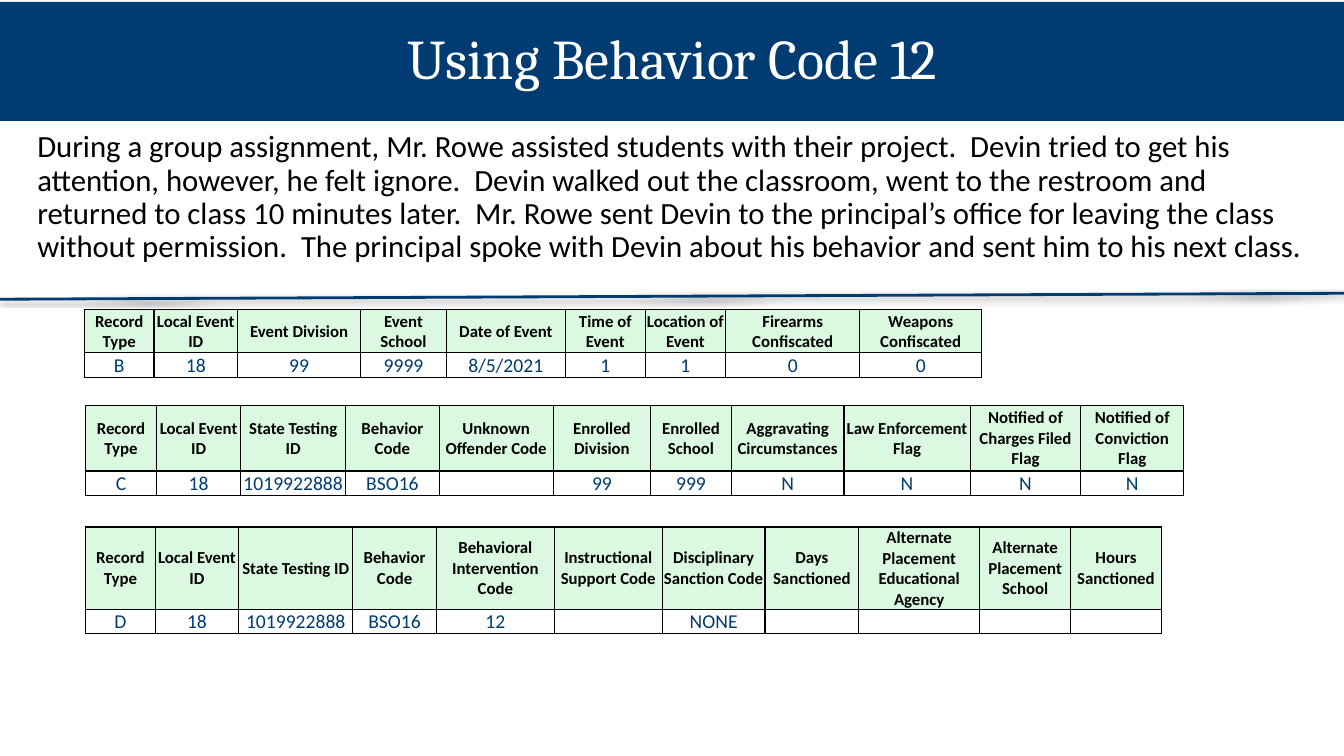
from dataclasses import dataclass

from lxml.etree import SubElement
from pptx import Presentation
from pptx.dml.color import RGBColor
from pptx.enum.shapes import MSO_CONNECTOR as Connector, MSO_SHAPE as Preset
from pptx.enum.text import MSO_ANCHOR as Anchor, PP_ALIGN as Align
from pptx.oxml import parse_xml
from pptx.oxml.ns import nsdecls, qn
from pptx.util import Cm, Pt


@dataclass(frozen=True)
class Theme:
    """Colours, fonts and type sizes of the slide."""
    navy: str = "003C71"
    mint: str = "DAF9E0"
    black: str = "000000"
    white: str = "FFFFFF"
    heading_font: str = "Cambria"
    text_font: str = "Calibri"
    title_size: int = 40
    body_size: int = 22
    header_size: int = 12
    value_size: int = 14


THEME = Theme()

SCENARIO = (
    "During a group assignment, Mr. Rowe assisted students with their project.  "
    "Devin tried to get his attention, however, he felt ignore.  Devin walked out "
    "the classroom, went to the restroom and returned to class 10 minutes later.  "
    "Mr. Rowe sent Devin to the principal’s office for leaving the class without "
    "permission.  The principal spoke with Devin about his behavior and sent him "
    "to his next class."
)

RECORDS = [
    {
        "left": 2.13, "top": 7.8, "header_height": 1.09,
        "columns": [
            ("Record Type", "B", 1.75), ("Local Event ID", "18", 2.11),
            ("Event Division", "99", 3.1), ("Event School", "9999", 2.16),
            ("Date of Event", "8/5/2021", 3.0), ("Time of Event", "1", 2.01),
            ("Location of Event", "1", 2.03), ("Firearms Confiscated", "0", 3.38),
            ("Weapons Confiscated", "0", 3.07),
        ],
    },
    {
        "left": 2.16, "top": 10.22, "header_height": 1.65,
        "columns": [
            ("Record Type", "C", 1.78), ("Local Event ID", "18", 2.13),
            ("State Testing ID", "1019922888", 2.64), ("Behavior Code", "BSO16", 2.36),
            ("Unknown Offender Code", "", 2.87), ("Enrolled Division", "99", 2.46),
            ("Enrolled School", "999", 2.03), ("Aggravating Circumstances", "N", 2.84),
            ("Law Enforcement Flag", "N", 3.18),
            ("Notified of Charges Filed Flag", "N", 2.79),
            ("Notified of Conviction Flag", "N", 2.59),
        ],
    },
    {
        "left": 2.16, "top": 13.28, "header_height": 2.07,
        "columns": [
            ("Record Type", "D", 1.75), ("Local Event ID", "18", 2.11),
            ("State Testing ID", "1019922888", 2.87), ("Behavior Code", "BSO16", 2.11),
            ("Behavioral Intervention Code", "12", 2.97),
            ("Instructional Support Code", "", 2.72),
            ("Disciplinary Sanction Code", "NONE", 2.59), ("Days Sanctioned", "", 2.36),
            ("Alternate Placement Educational Agency", "", 3.05),
            ("Alternate Placement School", "", 2.29), ("Hours Sanctioned", "", 2.29),
        ],
    },
]
VALUE_HEIGHT = 0.62


def add_run(paragraph, text, size, color, font=THEME.text_font, bold=False):
    """Append a formatted run to a paragraph."""
    run = paragraph.add_run()
    run.text = text
    run.font.name = font
    run.font.size = Pt(size)
    run.font.bold = bold
    run.font.color.rgb = RGBColor.from_string(color)


def add_title(slide, text, width):
    """Draw the title band across the slide."""
    band = slide.shapes.add_shape(Preset.RECTANGLE, 0, Cm(0.05), width, Cm(3))
    band.shadow.inherit = False
    band.fill.solid()
    band.fill.fore_color.rgb = RGBColor.from_string(THEME.navy)
    band.line.fill.background()
    band.text_frame.vertical_anchor = Anchor.MIDDLE
    paragraph = band.text_frame.paragraphs[0]
    paragraph.alignment = Align.CENTER
    paragraph.line_spacing = 0.9
    add_run(paragraph, text, THEME.title_size, THEME.white, THEME.heading_font)


def add_scenario(slide, text):
    """Write the scenario paragraph under the title."""
    box = slide.shapes.add_textbox(Cm(0.61), Cm(3.13), Cm(32.54), Cm(4.4))
    frame = box.text_frame
    frame.word_wrap = True
    frame.margin_left = frame.margin_right = Cm(0.33)
    frame.margin_top = frame.margin_bottom = Cm(0.18)
    paragraph = frame.paragraphs[0]
    paragraph.line_spacing = 0.9
    add_run(paragraph, text, THEME.body_size, THEME.black)


def add_divider(slide, width):
    """Draw the slightly tilted line with its soft shadow."""
    line = slide.shapes.add_connector(Connector.STRAIGHT, 0, Cm(7.54), width, Cm(7.39))
    line.line.color.rgb = RGBColor.from_string(THEME.navy)
    line.line.width = Pt(2)
    line._element.spPr.append(parse_xml(
        f'<a:effectLst {nsdecls("a")}>'
        f'<a:outerShdw blurRad="{Pt(3.1)}" dist="{Pt(1.6)}" dir="5400000" rotWithShape="0">'
        f'<a:srgbClr val="{THEME.black}"><a:alpha val="38000"/></a:srgbClr>'
        '</a:outerShdw></a:effectLst>'))


def add_borders(cell):
    """Give a cell thin black borders on all sides."""
    properties = cell._tc.get_or_add_tcPr()
    for index, side in enumerate(("lnL", "lnR", "lnT", "lnB")):
        properties.insert(index, parse_xml(
            f'<a:{side} {nsdecls("a")} w="{Pt(1)}"><a:solidFill>'
            f'<a:srgbClr val="{THEME.black}"/></a:solidFill></a:{side}>'))


def fill_cell(cell, text, is_header):
    """Format a table cell and write its text."""
    size = THEME.header_size if is_header else THEME.value_size
    cell.margin_left = cell.margin_right = cell.margin_top = Cm(0.02)
    cell.margin_bottom = 0
    cell.vertical_anchor = Anchor.MIDDLE
    if is_header:
        cell.fill.solid()
        cell.fill.fore_color.rgb = RGBColor.from_string(THEME.mint)
    else:
        cell.fill.background()
    add_borders(cell)
    paragraph = cell.text_frame.paragraphs[0]
    paragraph.alignment = Align.CENTER
    if text:
        color = THEME.black if is_header else THEME.navy
        add_run(paragraph, text, size, color, bold=is_header)
    else:
        SubElement(paragraph._p, qn("a:endParaRPr"), sz=str(size * 100))


def add_record(slide, left, top, header_height, columns):
    """Add a record table with one header row and one value row."""
    width = sum(column_width for _, _, column_width in columns)
    table = slide.shapes.add_table(
        2, len(columns), Cm(left), Cm(top), Cm(width),
        Cm(header_height + VALUE_HEIGHT)).table
    table.first_row = table.horz_banding = False
    table.rows[0].height = Cm(header_height)
    table.rows[1].height = Cm(VALUE_HEIGHT)
    for index, (header, value, column_width) in enumerate(columns):
        table.columns[index].width = Cm(column_width)
        fill_cell(table.cell(0, index), header, True)
        fill_cell(table.cell(1, index), value, False)


def main():
    """Build the slide and save it."""
    presentation = Presentation()
    presentation.slide_width = Cm(33.87)
    presentation.slide_height = Cm(19.05)
    slide = presentation.slides.add_slide(presentation.slide_layouts[6])
    add_title(slide, "Using Behavior Code 12", presentation.slide_width)
    add_scenario(slide, SCENARIO)
    add_divider(slide, presentation.slide_width)
    for record in RECORDS:
        add_record(slide, **record)
    presentation.save("out.pptx")


if __name__ == "__main__":
    main()
